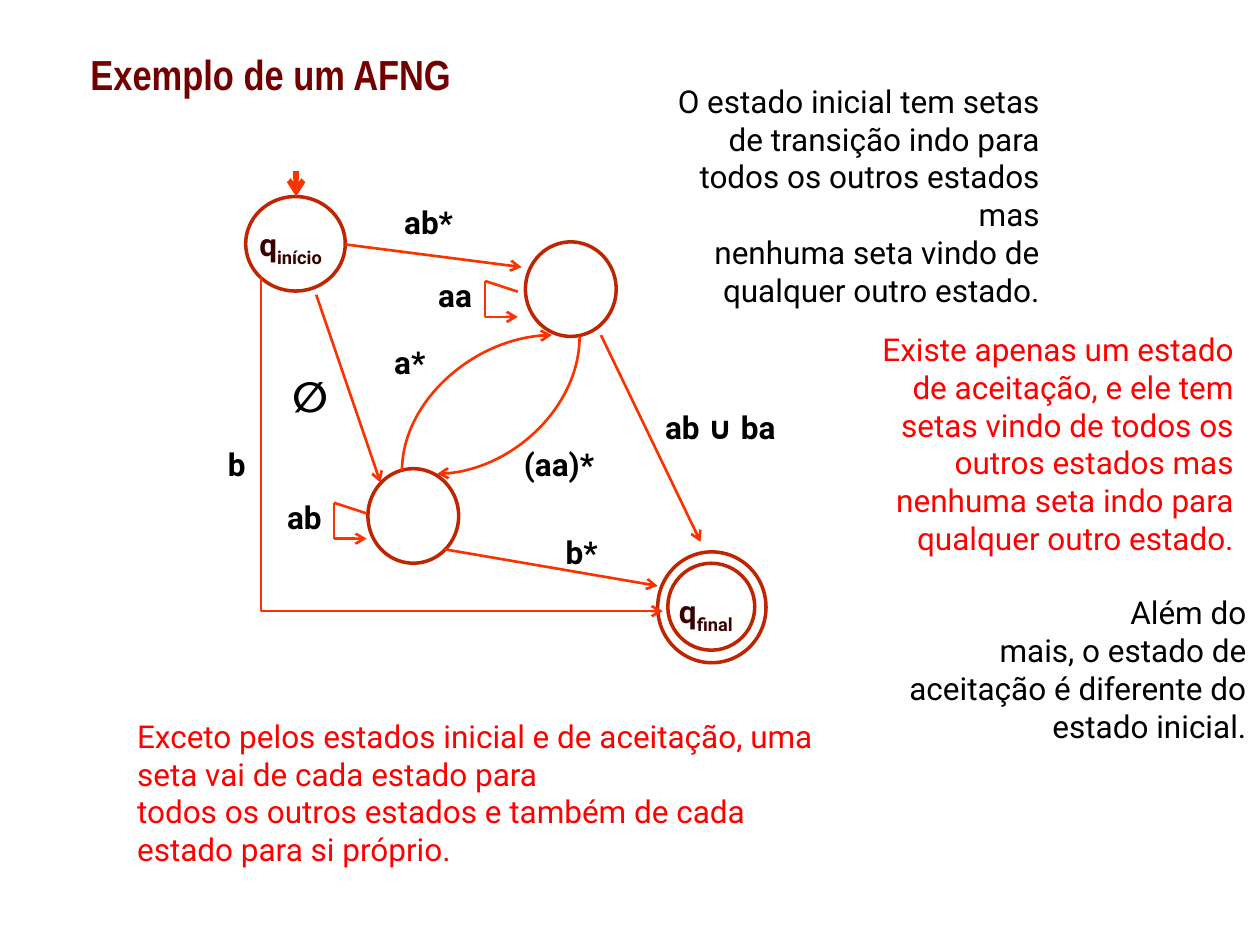
from dataclasses import dataclass

from lxml import etree
from pptx import Presentation
from pptx.dml.color import RGBColor
from pptx.enum.shapes import MSO_CONNECTOR, MSO_SHAPE
from pptx.enum.text import MSO_ANCHOR, MSO_AUTO_SIZE, PP_ALIGN
from pptx.oxml.ns import qn
from pptx.util import Inches, Pt

STRAIGHT = MSO_CONNECTOR.STRAIGHT
ELBOW = MSO_CONNECTOR.ELBOW
CURVE = MSO_CONNECTOR.CURVE
OVAL = MSO_SHAPE.OVAL
LEFT, RIGHT = PP_ALIGN.LEFT, PP_ALIGN.RIGHT
TOP, MIDDLE = MSO_ANCHOR.TOP, MSO_ANCHOR.MIDDLE
GROW, FIXED = MSO_AUTO_SIZE.SHAPE_TO_FIT_TEXT, MSO_AUTO_SIZE.NONE

COLUMNS, ROWS = 100, 75
SLIDE_WIDTH, SLIDE_HEIGHT = Inches(10), Inches(7.5)
BLACK, RED, WHITE = "000000", "FF0000", "FFFFFF"
MAROON, STATE_TEXT, STATE_LINE = "720000", "390000", "BD2600"
ARROW, LOOP = "F93200", "FF3300"
BODY = {"name": "Roboto", "size": Pt(18), "bold": False}
LABEL = {**BODY, "bold": True}
SYMBOL = {**LABEL, "size": Pt(24)}
TITLE = {"name": "Arial Narrow", "size": Pt(24), "bold": True}


@dataclass
class Box:
    """An area measured in grid columns and rows."""
    left: float
    top: float
    width: float
    height: float

    def inside(self, left, top, width=0, height=0):
        return Box(self.left + left, self.top + top, width, height)

    def emu(self):
        column, row = SLIDE_WIDTH / COLUMNS, SLIDE_HEIGHT / ROWS
        return [round(value * unit) for value, unit in
                zip((self.left, self.top, self.width, self.height),
                    (column, row, column, row))]


def color(value):
    return RGBColor.from_string(value)


def add_run(paragraph, text, style, text_color, subscript=False):
    run = paragraph.add_run()
    run.text = text
    for name, value in style.items():
        setattr(run.font, name, value)
    run.font.color.rgb = color(text_color)
    if subscript:
        run.font._element.set("baseline", "-25000")


def add_text(shapes, box, paragraphs, style, text_color=BLACK, align=LEFT,
             anchor=TOP, auto_size=GROW):
    """Each paragraph is a list of runs; runs after the first are subscripts."""
    frame = shapes.add_textbox(*box.emu()).text_frame
    settings = {"word_wrap": True, "vertical_anchor": anchor, "auto_size": auto_size}
    for name, value in settings.items():
        setattr(frame, name, value)
    for index, runs in enumerate(paragraphs):
        paragraph = frame.add_paragraph() if index else frame.paragraphs[0]
        paragraph.alignment = align
        for position, text in enumerate(runs):
            add_run(paragraph, text, style, text_color, subscript=position > 0)


def add_state(shapes, box, filled=True):
    state = shapes.add_shape(OVAL, *box.emu())
    state.shadow.inherit = False
    if filled:
        state.fill.solid()
        state.fill.fore_color.rgb = color(WHITE)
    else:
        state.fill.background()
    state.line.color.rgb = color(STATE_LINE)
    state.line.width = Pt(2)


def add_line(shapes, area, start, end, kind=STRAIGHT, line_color=ARROW,
             width=1.5, arrow=True):
    points = [area.inside(*point).emu()[:2] for point in (start, end)]
    connector = shapes.add_connector(kind, *points[0], *points[1])
    connector.line.color.rgb = color(line_color)
    connector.line.width = Pt(width)
    if arrow:
        etree.SubElement(connector.line._get_or_add_ln(), qn("a:tailEnd"), type="arrow")
    etree.SubElement(connector._element.spPr, qn("a:effectLst"))
    return connector


def add_corner(shapes, area, start, end, kind, preset):
    """Leave vertically and arrive horizontally: a quarter turn of the preset."""
    connector = add_line(shapes, area, start, end, kind)
    center_x = connector.left + connector.width // 2
    center_y = connector.top + connector.height // 2
    width, height = connector.height, connector.width
    frame = {"left": center_x - width // 2, "top": center_y - height // 2,
             "width": width, "height": height}
    for name, value in frame.items():
        setattr(connector, name, value)
    properties = connector._element.spPr
    properties.find(qn("a:prstGeom")).set("prst", preset)
    transform = properties.find(qn("a:xfrm"))
    transform.set("rot", str(90 * 60000))
    transform.set("flipH", str(int(end[1] < start[1])))
    transform.set("flipV", str(int(end[0] > start[0])))


def add_self_loop(shapes, area, text):
    group = shapes.add_group_shape().shapes
    add_text(group, area.inside(0, 0, 6.6, 4), [[text]], LABEL)
    corner = (4.7, 3.75)
    for start, end, arrow in ((corner, (7.3, 3.75), True),
                              (corner, (4.7, 0.9), False),
                              ((4.7, 0.9), (7.3, 1.75), False)):
        add_line(group, area, start, end, line_color=LOOP, arrow=arrow)


def add_automaton(shapes, area):
    for place in ((2.5, 2.6, 7.9, 7.5), (12.2, 24.2, 7.2, 7.5), (24.7, 6.2, 7.2, 7.5)):
        add_state(shapes, area.inside(*place))
    for place in ((35.2, 30.8, 8.6, 8.8), (36, 31.7, 6.9, 6.9)):
        add_state(shapes, area.inside(*place), filled=False)

    for left, top, name in ((2.6, 4.4, "início"), (35.9, 33.5, "final")):
        add_text(shapes, area.inside(left, top, 10.1, 4), [["q", name]], LABEL, STATE_TEXT)
    for left, top, width, text in (
            (34.8, 18.9, 14.4, "ab ∪ ba"), (14.1, 2.6, 7.7, "ab*"),
            (0.1, 21.8, 5.1, "b"), (26.9, 28.8, 6.5, "b*"),
            (23.6, 21.8, 9.5, "(aa)*"), (13.3, 13.7, 5.1, "a*")):
        add_text(shapes, area.inside(left, top, width, 4), [[text]], LABEL)
    add_text(shapes, area.inside(5.2, 15.9, 5.2, 5), [["∅"]], SYMBOL)

    for left, top, text in ((16.8, 8.4, "aa"), (4.8, 26, "ab")):
        add_self_loop(shapes, area.inside(left, top), text)

    add_line(shapes, area, (6.5, 0.6), (6.5, 2.6), width=3)
    for start, end in (((10.4, 6.4), (24.4, 8.2)), ((8.1, 10.4), (13.2, 25.3)),
                       ((30.7, 13.6), (38.6, 30)), ((18.3, 30.6), (35.2, 33.5))):
        add_line(shapes, area, start, end)
    add_corner(shapes, area, (3.7, 9), (35.6, 35.5), ELBOW, "bentConnector2")
    for start, end in (((29, 13.7), (17.7, 24.6)), ((14.9, 24.4), (26.8, 13.6))):
        add_corner(shapes, area, start, end, CURVE, "curvedConnector2")


def add_notes(shapes, area):
    notes = (
        ((42.7, 0, 30.9, 19.2), BLACK, RIGHT,
         "O estado inicial tem setas de transição indo para todos os outros estados mas",
         "nenhuma seta vindo de qualquer outro estado."),
        ((58.1, 19.7, 30.9, 19.2), RED, RIGHT,
         "Existe apenas um estado de aceitação, e ele tem setas vindo de todos os",
         "outros estados mas nenhuma seta indo para qualquer outro estado."),
        ((59.1, 40.6, 30.9, 13.1), BLACK, RIGHT,
         "Além do",
         "mais, o estado de aceitação é diferente do estado inicial."),
        ((0, 50.4, 56, 13.1), RED, LEFT,
         "Exceto pelos estados inicial e de aceitação, uma seta vai de cada estado para",
         "todos os outros estados e também de cada estado para si próprio."),
    )
    for place, text_color, align, *paragraphs in notes:
        add_text(shapes, area.inside(*place), [[text] for text in paragraphs],
                 BODY, text_color, align)


def main():
    presentation = Presentation()
    presentation.slide_width, presentation.slide_height = SLIDE_WIDTH, SLIDE_HEIGHT
    slide = presentation.slides.add_slide(presentation.slide_layouts[6])
    add_text(slide.shapes, Box(6.2, -0.4, 79.7, 12.5), [["Exemplo de um AFNG"]],
             TITLE, MAROON, anchor=MIDDLE, auto_size=FIXED)
    add_automaton(slide.shapes, Box(17, 13, 50, 40))
    add_notes(slide.shapes, Box(9.9, 6, 90, 64))
    presentation.save("out.pptx")


if __name__ == "__main__":
    main()
